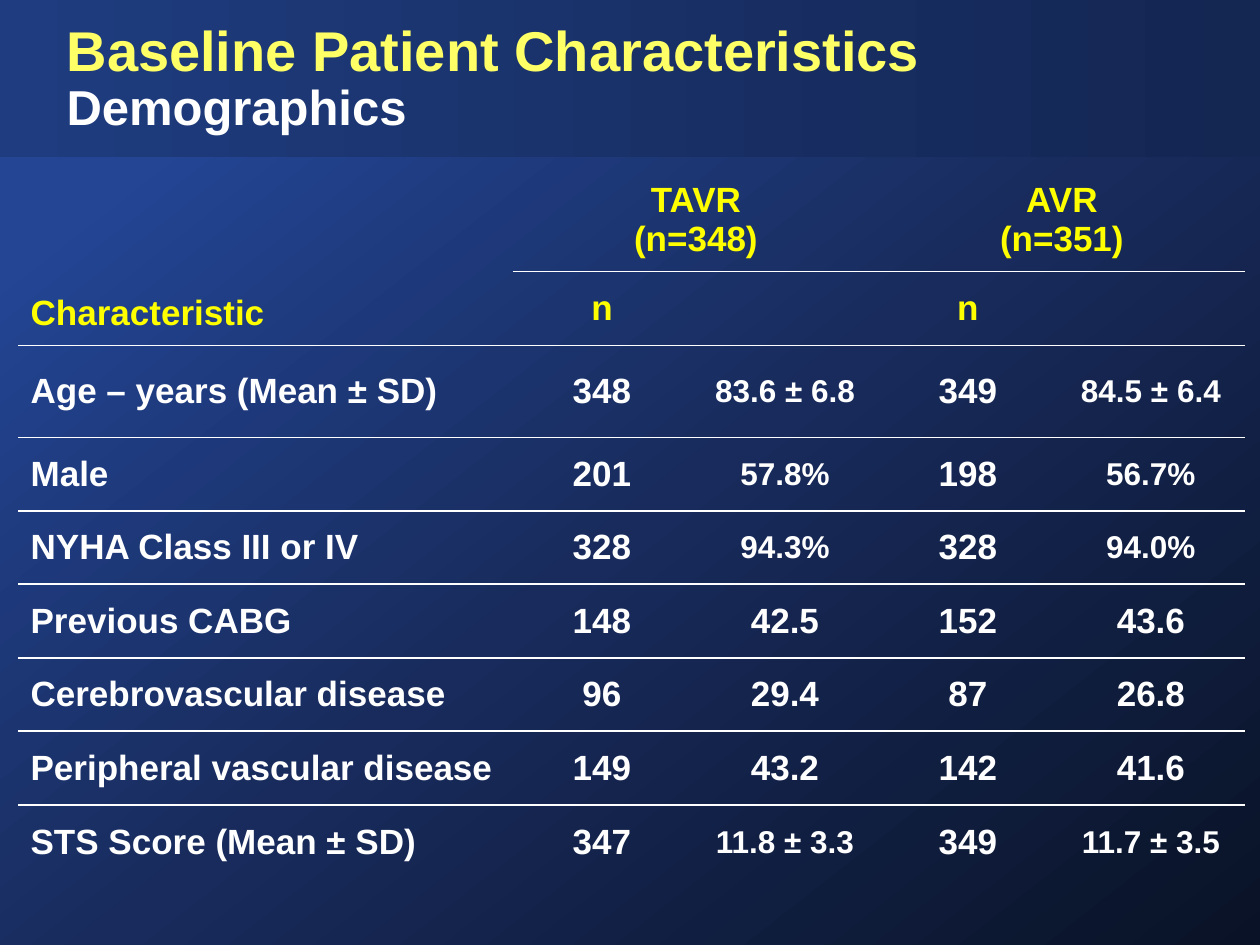
import lxml.etree
import pptx
import pptx.dml.color
import pptx.enum.shapes
import pptx.enum.text
import pptx.oxml
import pptx.oxml.ns
import pptx.util

PX = 914400 / 126
ALIGN = pptx.enum.text.PP_ALIGN
ANCHOR = pptx.enum.text.MSO_ANCHOR
NO_STYLE_TABLE = "{2D5ABB26-0587-4C30-8999-92F81FD0307C}"

COLORS = {
    "title": "FFFF66", "header": "FFFF00", "text": "FFFFFF", "line": "FFFFFF",
    "blue": "234594", "navy": "182B5C", "night": "091226",
    "band left": "1E3C7F", "band right": "142652",
}

COLUMN_WIDTHS = [495, 178, 188, 178, 188]
ROW_HEIGHTS = [103, 74, 92, 74, 73, 74, 73, 74, 74]
HEADER_ROWS = [
    ["Characteristic", "TAVR\v(n=348)", "", "AVR\n(n=351)", ""],
    ["", "n", "", "n", ""],
]
BODY_ROWS = [
    ["Age – years (Mean ± SD)", "348", "83.6 ± 6.8", "349", "84.5 ± 6.4"],
    ["Male", "201", "57.8%", "198", "56.7%"],
    ["NYHA Class III or IV", "328", "94.3%", "328", "94.0%"],
    ["Previous CABG", "148", "42.5", "152", "43.6"],
    ["Cerebrovascular disease", "96", "29.4", "87", "26.8"],
    ["Peripheral vascular disease", "149", "43.2", "142", "41.6"],
    ["STS Score (Mean ± SD)", "347", "11.8 ± 3.3", "349", "11.7 ± 3.5"],
]


def px(length):
    return pptx.util.Emu(round(length * PX))


def rgb(name):
    return pptx.dml.color.RGBColor.from_string(COLORS[name])


def drawing_xml(xml):
    """Parse a fragment whose root element is in the a: namespace."""
    head, tail = xml.split(" ", 1)
    return pptx.oxml.parse_xml(f"{head} {pptx.oxml.ns.nsdecls('a')} {tail}")


def write_text(frame, text, size=20, color="text", align=ALIGN.LEFT, spacing=None):
    frame.text = text
    frame.word_wrap = True
    for paragraph in frame.paragraphs:
        paragraph.alignment = align
        if spacing:
            paragraph.line_spacing = pptx.util.Pt(spacing)
        for run in paragraph.runs:
            run.font.name = "Arial"
            run.font.size = pptx.util.Pt(size)
            run.font.bold = True
            run.font.color.rgb = rgb(color)


def add_gradient_panel(slide, left, top, width, height, stops, angle):
    """Add a borderless rectangle; stops are (percent, colour name) pairs."""
    panel = slide.shapes.add_shape(
        pptx.enum.shapes.MSO_SHAPE.RECTANGLE, px(left), px(top), px(width), px(height))
    panel.shadow.inherit = False
    panel.line.fill.background()
    stop_list = "".join(
        f'<a:gs pos="{percent * 1000}"><a:srgbClr val="{COLORS[name]}"/></a:gs>'
        for percent, name in stops)
    geometry = panel._element.spPr.find(pptx.oxml.ns.qn("a:prstGeom"))
    geometry.addnext(drawing_xml(
        f'<a:gradFill rotWithShape="1"><a:gsLst>{stop_list}</a:gsLst>'
        f'<a:lin ang="{angle * 60000}" scaled="0"/></a:gradFill>'))


def place_title(slide, left, top, width, height):
    title = slide.shapes.title
    title.left, title.top, title.width, title.height = map(px, (left, top, width, height))
    frame = title.text_frame
    write_text(frame, "Baseline Patient Characteristics\vDemographics",
               size=32, color="title", spacing=30)
    frame.vertical_anchor = ANCHOR.TOP
    frame.auto_size = pptx.enum.text.MSO_AUTO_SIZE.NONE
    subtitle = frame.paragraphs[0].runs[1]
    subtitle.font.size = pptx.util.Pt(28)
    subtitle.font.color.rgb = rgb("text")
    slide.shapes._spTree.append(title._element)


def add_bottom_border(cell):
    cell._tc.get_or_add_tcPr().insert(0, drawing_xml(
        f'<a:lnB w="12700"><a:solidFill><a:srgbClr val="{COLORS["line"]}"/>'
        '</a:solidFill></a:lnB>'))


def add_characteristics_table(slide, left, top):
    rows = HEADER_ROWS + BODY_ROWS
    table = slide.shapes.add_table(
        len(rows), len(COLUMN_WIDTHS), px(left), px(top),
        px(sum(COLUMN_WIDTHS)), px(sum(ROW_HEIGHTS))).table
    table.first_row = table.horz_banding = False
    table._tbl.tblPr.find(pptx.oxml.ns.qn("a:tableStyleId")).text = NO_STYLE_TABLE
    for column, width in zip(table.columns, COLUMN_WIDTHS):
        column.width = px(width)
    for row, height in zip(table.rows, ROW_HEIGHTS):
        row.height = px(height)

    table.cell(0, 0).merge(table.cell(1, 0))
    for first in (1, 3):
        table.cell(0, first).merge(table.cell(0, first + 1))

    for i, row in enumerate(rows):
        for j, text in enumerate(row):
            cell = table.cell(i, j)
            cell.fill.background()
            cell.vertical_anchor = ANCHOR.BOTTOM if i == 0 else ANCHOR.MIDDLE
            if i == 0:
                cell.margin_top = cell.margin_bottom = pptx.util.Inches(0.1)
            if i < len(rows) - 1:
                add_bottom_border(cell)
            if text:
                has_unit = j > 0 and ("±" in text or "%" in text)
                write_text(cell.text_frame, text,
                           size=18 if has_unit else 20,
                           color="header" if i < len(HEADER_ROWS) else "text",
                           align=ALIGN.CENTER if j else ALIGN.LEFT)


def main():
    presentation = pptx.Presentation()
    presentation.slide_width, presentation.slide_height = px(1260), px(945)
    slide = presentation.slides.add_slide(presentation.slide_layouts[5])
    add_gradient_panel(slide, 0, 0, 1260, 945,
                       [(14, "blue"), (53, "navy"), (100, "night")], 52)
    add_gradient_panel(slide, 0, 0, 1260, 157,
                       [(0, "band left"), (100, "band right")], 0)
    place_title(slide, 54, 24, 897, 131)
    add_characteristics_table(slide, 18, 168)
    presentation.save("out.pptx")


if __name__ == "__main__":
    main()
